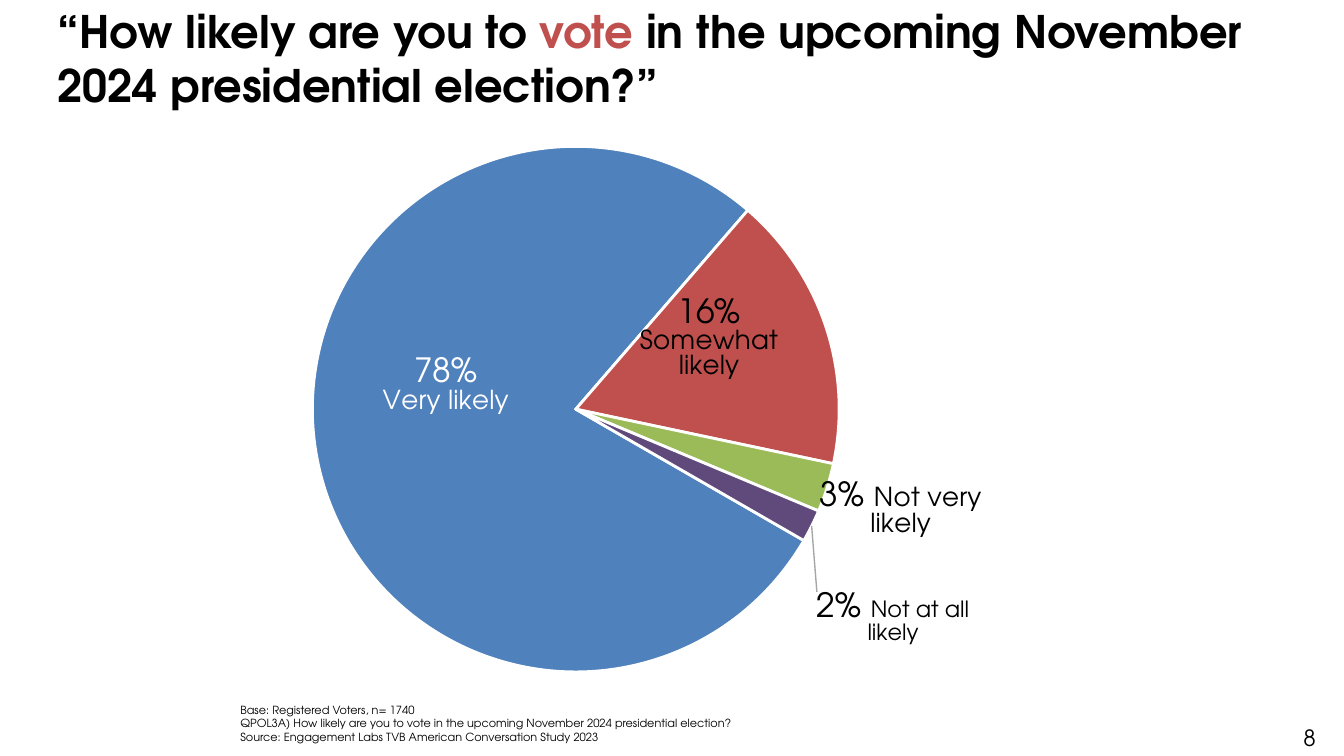
from lxml import etree
from pptx import Presentation
from pptx.chart.data import CategoryChartData
from pptx.dml.color import RGBColor
from pptx.enum.chart import XL_CHART_TYPE, XL_LABEL_POSITION
from pptx.enum.text import MSO_ANCHOR, PP_ALIGN
from pptx.oxml import parse_xml
from pptx.oxml.ns import nsdecls, qn
from pptx.util import Inches, Pt

PIE = XL_CHART_TYPE.PIE
CENTER_LABEL = XL_LABEL_POSITION.CENTER
TOP, MIDDLE, BOTTOM = MSO_ANCHOR.TOP, MSO_ANCHOR.MIDDLE, MSO_ANCHOR.BOTTOM
CENTER = PP_ALIGN.CENTER

FONT = "TeX Gyre Adventor"
BLACK = RGBColor(0x00, 0x00, 0x00)
WHITE = RGBColor(0xFF, 0xFF, 0xFF)
GRAY = RGBColor(0xA6, 0xA6, 0xA6)
BLUE = RGBColor(0x4F, 0x81, 0xBD)
RED = RGBColor(0xC0, 0x50, 0x4D)
GREEN = RGBColor(0x9B, 0xBB, 0x59)
PURPLE = RGBColor(0x60, 0x4A, 0x7B)

# value, slice colour, text colour, label shift (share of chart), label lines of (text, size) spans
SLICES = [
    (0.78, BLUE, WHITE, (0, -0.08), [[("78%", 18)], [("Very likely", 14)]]),
    (0.17, RED, BLACK, (0.01, -0.05), [[("16%", 18)], [("Somewhat", 14)], [("likely", 14)]]),
    (0.03, GREEN, BLACK, (0.23, 0.11), [[("3% ", 18), ("Not very likely", 14)]]),
    (0.02, PURPLE, BLACK, (0.23, 0.27), [[("2% ", 18), ("Not at all", 12)], [("likely", 12)]]),
]


def manual_layout(**parts):
    """Chart layout element; parts are its children in schema order."""
    items = "".join(f'<c:{name} val="{value}"/>' for name, value in parts.items())
    return parse_xml(f'<c:layout {nsdecls("c")}><c:manualLayout>{items}'
                     "</c:manualLayout></c:layout>")


class SlideBuilder:
    def __init__(self, page):
        self.page = page

    def text(self, left, top, width, height, lines, size, bold=False, anchor=TOP):
        """Each line is a list of (text, colour) spans."""
        box = self.page.shapes.add_textbox(
            Inches(left), Inches(top), Inches(width), Inches(height))
        frame = box.text_frame
        frame.word_wrap = True
        frame.vertical_anchor = anchor
        for index, line in enumerate(lines):
            para = frame.paragraphs[0] if index == 0 else frame.add_paragraph()
            para.font.name, para.font.size, para.font.bold = FONT, Pt(size), bold
            for words, color in line:
                span = para.add_run()
                span.text = words
                span.font.color.rgb = color

    def pie(self, left, top, width, height, slices, start_angle, plot_layout):
        data = CategoryChartData(number_format="0%")
        data.categories = [str(number + 1) for number in range(len(slices))]
        data.add_series("Series 1", [item[0] for item in slices])
        chart = self.page.shapes.add_chart(
            PIE, Inches(left), Inches(top), Inches(width), Inches(height), data).chart
        chart.has_legend = False
        chart.has_title = False
        chart.font.name, chart.font.size = FONT, Pt(10)
        chart.font.color.rgb = BLACK

        plot = chart.plots[0]
        plot.vary_by_categories = True
        series = plot.series[0]
        angle = etree.SubElement(series._element.getparent(), qn("c:firstSliceAng"))
        angle.set("val", str(start_angle))
        area = chart._chartSpace.chart.plotArea
        for old in area.findall(qn("c:layout")):
            area.remove(old)
        area.insert(0, plot_layout)

        labels = series.data_labels
        labels.show_value = True
        labels.number_format, labels.number_format_is_linked = "0%", False
        for index, (_, color, text_color, shift, lines) in enumerate(slices):
            point = series.points[index]
            point.format.fill.solid()
            point.format.fill.fore_color.rgb = color
            point.format.line.color.rgb = WHITE
            point.format.line.width = Pt(1.5)
            self.slice_label(point.data_label, lines, text_color, shift)
        self.leader_lines(labels._element)

    def leader_lines(self, element):
        switch = element.find(qn("c:showLeaderLines"))
        if switch is None:
            switch = etree.SubElement(element, qn("c:showLeaderLines"))
        switch.set("val", "1")
        switch.addnext(parse_xml(
            f'<c:leaderLines {nsdecls("c", "a")}><c:spPr><a:ln w="9525"><a:solidFill>'
            f'<a:srgbClr val="{GRAY}"/></a:solidFill></a:ln></c:spPr></c:leaderLines>'))

    def slice_label(self, label, lines, color, shift):
        frame = label.text_frame
        for index, line in enumerate(lines):
            para = frame.paragraphs[0] if index == 0 else frame.add_paragraph()
            para.alignment = CENTER
            for words, size in line:
                span = para.add_run()
                span.text = words
                span.font.name, span.font.size, span.font.bold = FONT, Pt(size), False
                span.font.color.rgb = color
        label.position = CENTER_LABEL
        element = frame._txBody.getparent().getparent()
        element.find(qn("c:idx")).addnext(manual_layout(x=shift[0], y=shift[1]))


def main():
    deck = Presentation()
    # 16:9 page
    deck.slide_width, deck.slide_height = Inches(10), Inches(10 * 9 / 16)
    slide = SlideBuilder(deck.slides.add_slide(deck.slide_layouts[6]))

    # Page number
    slide.text(9.6, 5.34, 0.4, 0.14, [[("8", BLACK)]], 12)

    # Question
    slide.text(0.33, 0.02, 9.5, 0.82, [[
        ("“How likely are you to ", BLACK), ("vote", RED),
        (" in the upcoming November 2024 presidential election?”", BLACK),
    ]], 24, bold=True, anchor=MIDDLE)

    # Base and source
    notes = [
        "Base: Registered Voters, n= 1740",
        "QPOL3A) How likely are you to vote in the upcoming November 2024 presidential election?",
        "Source: Engagement Labs TVB American Conversation Study 2023",
    ]
    slide.text(1.69, 5.18, 8.15, 0.4, [[(note, BLACK)] for note in notes], 6, anchor=BOTTOM)

    # Answers
    plot_layout = manual_layout(layoutTarget="inner", xMode="edge", yMode="edge",
                                x=0.15, y=0.06, w=0.61, h=0.94)
    slide.pie(1.35, 0.84, 6.45, 4.17, SLICES, 120, plot_layout)

    deck.save("out.pptx")


if __name__ == "__main__":
    main()
